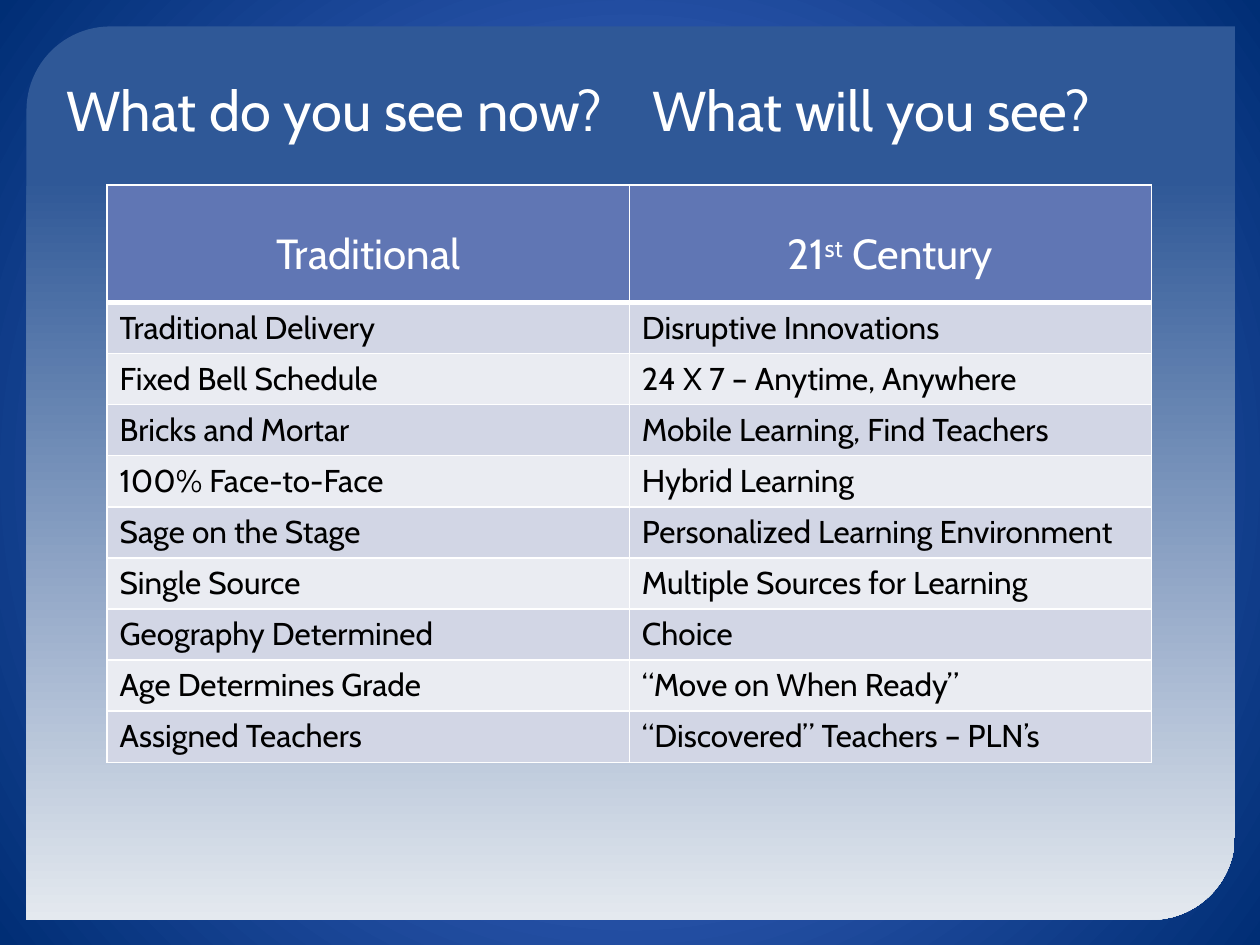
from typing import NamedTuple

from lxml import etree
from pptx import Presentation
from pptx.dml.color import RGBColor
from pptx.enum.shapes import MSO_SHAPE
from pptx.enum.text import MSO_ANCHOR, PP_ALIGN
from pptx.oxml import parse_xml
from pptx.oxml.ns import nsdecls, qn
from pptx.util import Inches, Pt

PANEL_SHAPE = MSO_SHAPE.ROUND_2_DIAG_RECTANGLE
BOTTOM = MSO_ANCHOR.BOTTOM
CENTER = PP_ALIGN.CENTER
LEFT = PP_ALIGN.LEFT

FONT = "Cabin"
WHITE = RGBColor(0xFF, 0xFF, 0xFF)
BLACK = RGBColor(0x00, 0x00, 0x00)
GLOW_BLUE = RGBColor(0x54, 0x7B, 0xE2)
NAVY = RGBColor(0x00, 0x2E, 0x75)
PANEL_BLUE = RGBColor(0x2F, 0x58, 0x97)
PANEL_PALE = RGBColor(0xE4, 0xE9, 0xEF)
HEADER_BLUE = RGBColor(0x60, 0x76, 0xB4)
BANDS = (RGBColor(0xD2, 0xD6, 0xE5), RGBColor(0xEA, 0xEC, 0xF2))


class Run(NamedTuple):
    text: str
    raised: bool = False


class Style(NamedTuple):
    size: int
    color: RGBColor
    align: PP_ALIGN = LEFT


class Comparison(NamedTuple):
    traditional: str
    modern: str


TITLE_STYLE = Style(32, WHITE)
HEADER_STYLE = Style(24, WHITE, CENTER)
BODY_STYLE = Style(18, BLACK)

HEADERS = (
    [Run("Traditional")],
    [Run("21"), Run("st", raised=True), Run(" Century")],
)
COMPARISONS = (
    Comparison("Traditional Delivery", "Disruptive Innovations"),
    Comparison("Fixed Bell Schedule", "24 X 7 – Anytime, Anywhere"),
    Comparison("Bricks and Mortar", "Mobile Learning, Find Teachers"),
    Comparison("100% Face-to-Face", "Hybrid Learning"),
    Comparison("Sage on the Stage", "Personalized Learning Environment"),
    Comparison("Single Source", "Multiple Sources for Learning"),
    Comparison("Geography Determined", "Choice"),
    Comparison("Age Determines Grade", "“Move on When Ready”"),
    Comparison("Assigned Teachers", "“Discovered” Teachers – PLN’s"),
)


def set_gradient(fill, stops: list[tuple[float, RGBColor]]) -> None:
    fill.gradient()
    for stop, (position, color) in zip(fill.gradient_stops, stops):
        stop.position = position
        stop.color.rgb = color


def write(paragraph, runs: list[Run], style: Style) -> None:
    paragraph.alignment = style.align
    for piece in runs:
        run = paragraph.add_run()
        run.text = piece.text
        run.font.name = FONT
        run.font.size = Pt(style.size)
        run.font.color.rgb = style.color
        if piece.raised:
            run.font._element.set("baseline", "30000")


def set_borders(cell, bottom: int = 1) -> None:
    properties = cell._tc.get_or_add_tcPr()
    for side, width in (("L", 1), ("R", 1), ("T", 1), ("B", bottom)):
        properties.append(parse_xml(
            f'<a:ln{side} {nsdecls("a")} w="{Pt(width)}"><a:solidFill>'
            f'<a:srgbClr val="{WHITE}"/></a:solidFill></a:ln{side}>'))


def fill_cell(cell, runs: list[Run], style: Style, color: RGBColor,
              bottom: int = 1) -> None:
    set_borders(cell, bottom)
    cell.fill.solid()
    cell.fill.fore_color.rgb = color
    write(cell.text_frame.paragraphs[0], runs, style)


def draw_background(slide) -> None:
    fill = slide.background.fill
    set_gradient(fill, [(0, GLOW_BLUE), (1, NAVY)])
    # Turn the linear gradient into a radial one around the centre
    linear = next(slide._element.iter(qn("a:lin")))
    radial = etree.Element(qn("a:path"), path="circle")
    etree.SubElement(radial, qn("a:fillToRect"),
                     dict.fromkeys("ltrb", "50000"))
    linear.getparent().replace(linear, radial)


def draw_panel(slide) -> None:
    panel = slide.shapes.add_shape(
        PANEL_SHAPE, Inches(0.21), Inches(0.21), Inches(9.59), Inches(7.09))
    panel.adjustments[0] = 0.094
    panel.adjustments[1] = 0
    panel.shadow.inherit = False
    panel.line.fill.background()
    set_gradient(panel.fill, [(0.17, PANEL_BLUE), (1, PANEL_PALE)])
    panel.fill.gradient_angle = 270


def draw_title(slide) -> None:
    title = slide.shapes.add_textbox(
        Inches(0.43), Inches(0.25), Inches(9.22), Inches(0.93))
    frame = title.text_frame
    frame.word_wrap = True
    frame.vertical_anchor = BOTTOM
    question = frame.paragraphs[0]
    # A tab stop lines up the second question
    tabs = etree.SubElement(question._p.get_or_add_pPr(), qn("a:tabLst"))
    etree.SubElement(tabs, qn("a:tab"), pos=str(Inches(4.65)), algn="l")
    write(question, [Run("What do you see now?\tWhat will you see?")],
          TITLE_STYLE)


def draw_comparison(slide) -> None:
    width, height, header_height = Inches(8.29), Inches(4.58), Inches(0.93)
    table = slide.shapes.add_table(
        len(COMPARISONS) + 1, len(HEADERS),
        Inches(0.85), Inches(1.47), width, height).table
    table.rows[0].height = header_height
    for row in list(table.rows)[1:]:
        row.height = (height - header_height) // len(COMPARISONS)

    for column, runs in enumerate(HEADERS):
        header = table.cell(0, column)
        header.margin_top = Inches(0.35)
        fill_cell(header, runs, HEADER_STYLE, HEADER_BLUE, bottom=3)

    for index, comparison in enumerate(COMPARISONS):
        for column, text in enumerate(comparison):
            fill_cell(table.cell(index + 1, column), [Run(text)],
                      BODY_STYLE, BANDS[index % 2])


def main() -> None:
    deck = Presentation()
    deck.slide_width, deck.slide_height = Inches(10), Inches(7.5)
    slide = deck.slides.add_slide(deck.slide_layouts[6])
    draw_background(slide)
    draw_panel(slide)
    draw_title(slide)
    draw_comparison(slide)
    deck.save("out.pptx")


if __name__ == "__main__":
    main()
